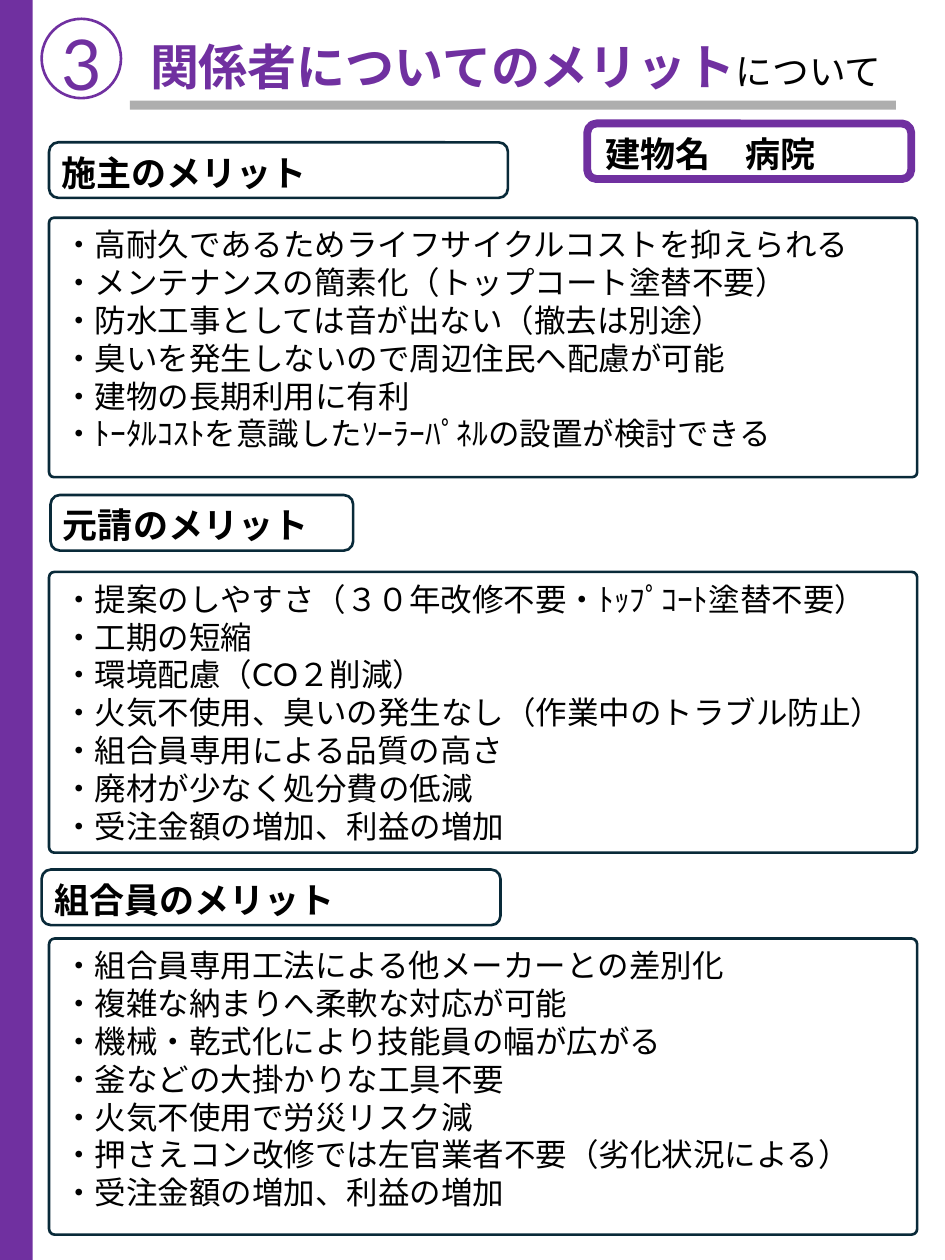
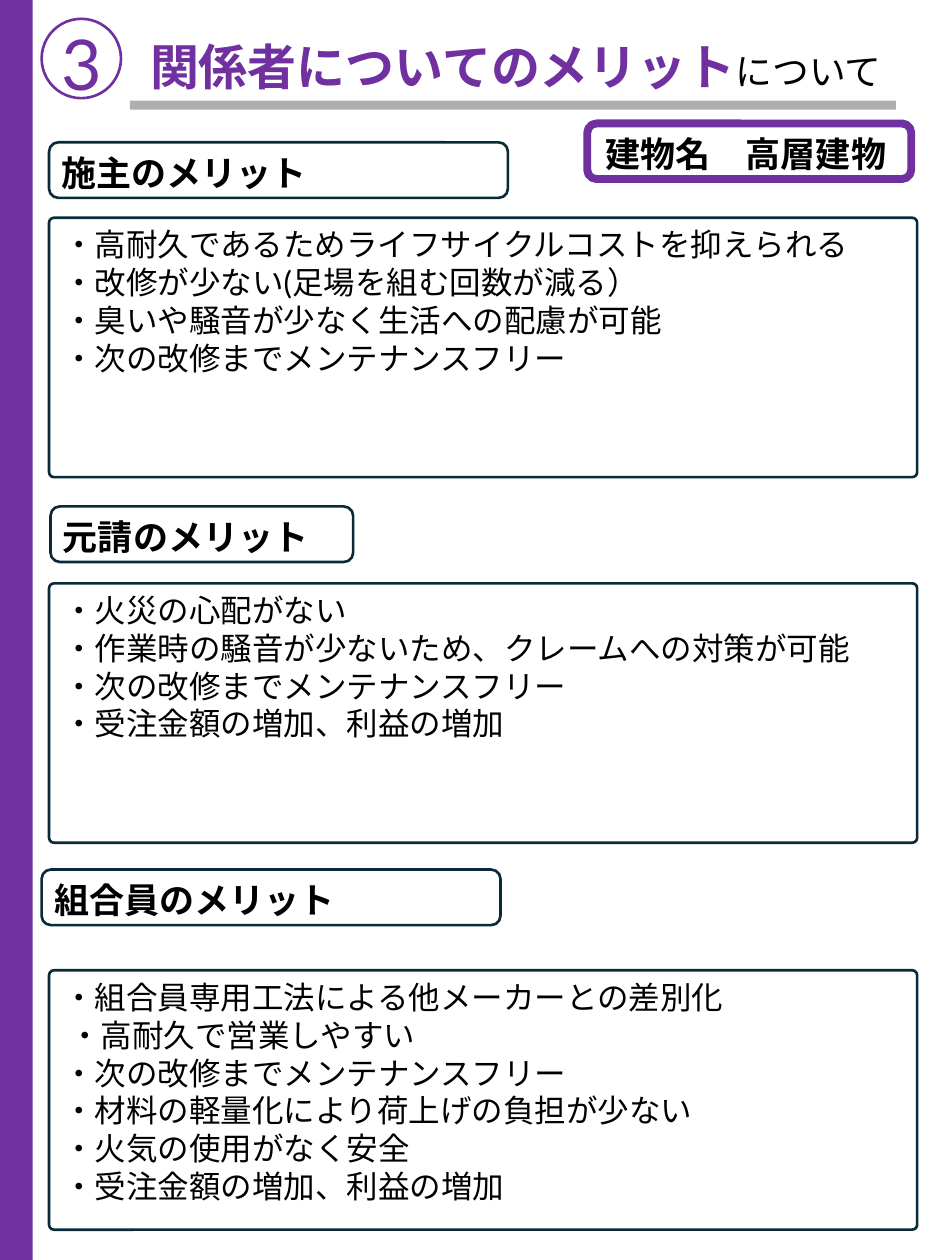
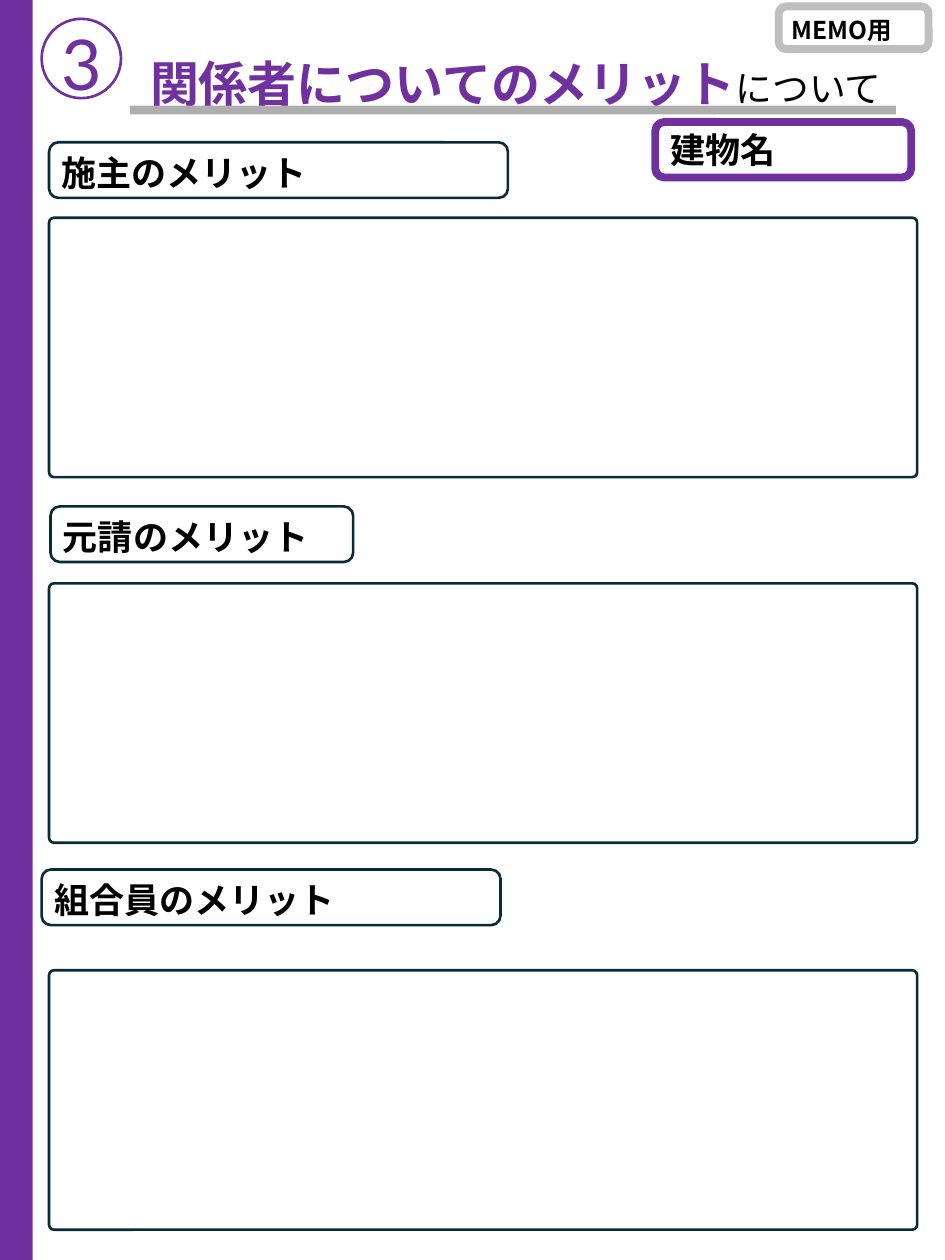
"""Build three portrait slides on the merits for each party in a building project."""
from dataclasses import dataclass
from typing import Any, NamedTuple

from pptx import Presentation
from pptx import util as u
from pptx.dml import color
from pptx.enum import lang, shapes, text
from pptx.oxml import xmlchemy as xml


@dataclass(frozen=True)
class Theme:
    """Colours, fonts and type sizes of the deck."""
    purple: str = "7030A0"
    navy: str = "092A39"
    bar_grey: str = "AEAEAE"
    memo_grey: str = "BFBFBF"
    white: str = "FFFFFF"
    black: str = "000000"
    body_font: str = "Lato"
    label_font: str = "Noto Sans CJK JP"
    number_size: int = 40
    title_size: int = 28
    suffix_size: int = 21
    label_size: int = 20
    list_size: int = 18
    memo_size: int = 14
    thin: float = 1.5
    thick: float = 4.5


class Box(NamedTuple):
    """Left, top, width and height in centimetres."""
    left: float
    top: float
    width: float
    height: float


@dataclass(frozen=True)
class Label:
    """Rounded frame with bold wording laid over it."""
    wording: str
    frame: Box
    words: Box
    line: str
    weight: float
    size: int


@dataclass(frozen=True)
class Section:
    """Heading and list panel for one party."""
    heading: Label
    panel: Box
    merits: tuple[str, ...] = ()
    indented: int = -1


@dataclass(frozen=True)
class Page:
    """Everything that differs between slides."""
    labels: tuple[Label, ...]
    sections: tuple[Section, ...]
    title_top: float = 0.61
    bar_top: float = 2.03


THEME = Theme()
SLIDE_WIDTH, SLIDE_HEIGHT = 19.05, 25.4
LABEL_HEIGHT = 1.12
PANEL_HEIGHT = 5.23
PANEL_ROUNDING = 0.019
EXTRA_INDENT = 0.12
COMPARISON_LAYOUT = 4


def set_all(target: Any, values: dict[str, Any]) -> None:
    """Set every attribute in values on target."""
    for attribute, value in values.items():
        setattr(target, attribute, value)


def place(part: Any, box: Box) -> None:
    """Move and size a part."""
    set_all(part, {side: u.Cm(length) for side, length in box._asdict().items()})


def write(paragraph: Any, wording: str, size: int, ink: str = THEME.black,
          family: str = THEME.body_font, bold: bool = False) -> None:
    """Add one formatted run to a paragraph."""
    run = paragraph.add_run()
    run.text = wording
    set_all(run.font, {"size": u.Pt(size), "bold": bold, "name": family,
                       "language_id": lang.MSO_LANGUAGE_ID.JAPANESE})
    run.font.color.rgb = color.RGBColor.from_string(ink)
    east_asian = xml.OxmlElement("a:ea")
    east_asian.set("typeface", family)
    run.font._element.append(east_asian)


def paint(part: Any, fill: str, line: str | None = None, weight: float = 0) -> None:
    """Give a part a solid fill and an optional outline."""
    part.fill.solid()
    part.fill.fore_color.rgb = color.RGBColor.from_string(fill)
    if line is None:
        part.line.fill.background()
    else:
        part.line.color.rgb = color.RGBColor.from_string(line)
        part.line.width = u.Pt(weight)


def add_figure(slide: Any, kind: Any, box: Box, fill: str,
               line: str | None = None, weight: float = 0) -> Any:
    """Add a flat preset shape."""
    figure = slide.shapes.add_shape(kind, *map(u.Cm, box))
    figure.shadow.inherit = False
    paint(figure, fill, line, weight)
    return figure


def add_words(slide: Any, box: Box, wording: str, size: int, **style: Any) -> None:
    """Add a wrapping text box with one line of text."""
    frame = slide.shapes.add_textbox(*map(u.Cm, box)).text_frame
    set_all(frame, {"word_wrap": True,
                    "auto_size": text.MSO_AUTO_SIZE.SHAPE_TO_FIT_TEXT})
    write(frame.paragraphs[0], wording, size, **style)


def add_label(slide: Any, label: Label) -> None:
    """Draw a rounded frame and its wording."""
    add_figure(slide, shapes.MSO_SHAPE.ROUNDED_RECTANGLE, label.frame,
               THEME.white, label.line, label.weight)
    add_words(slide, label.words, label.wording, label.size,
              family=THEME.label_font, bold=True)


def add_title(slide: Any, top: float) -> None:
    """Fill the title placeholder in two styles."""
    title = slide.shapes.title
    place(title, Box(2.77, top, 16.43, 1.6))
    set_all(title.text_frame, {"auto_size": text.MSO_AUTO_SIZE.NONE, "word_wrap": True,
                               "vertical_anchor": text.MSO_ANCHOR.MIDDLE})
    paragraph = title.text_frame.paragraphs[0]
    set_all(paragraph, {"alignment": text.PP_ALIGN.LEFT, "line_spacing": 0.9})
    write(paragraph, "関係者についてのメリット", THEME.title_size, THEME.purple, bold=True)
    write(paragraph, "について", THEME.suffix_size)


def fill_merits(panel: Any, section: Section) -> None:
    """Turn a body placeholder into a rounded list panel."""
    place(panel, section.panel)
    outline = xml.OxmlElement("a:prstGeom")
    outline.set("prst", "roundRect")
    panel._element.spPr.append(outline)
    paint(panel, THEME.white, THEME.navy, THEME.thin)
    frame = panel.text_frame
    set_all(frame, {"auto_size": text.MSO_AUTO_SIZE.NONE, "word_wrap": True,
                    "vertical_anchor": text.MSO_ANCHOR.TOP})
    for index, merit in enumerate(section.merits):
        paragraph = frame.add_paragraph() if index else frame.paragraphs[0]
        properties = paragraph._p.get_or_add_pPr()
        indent = EXTRA_INDENT if index == section.indented else 0
        properties.set("marL", str(int(u.Cm(indent))))
        properties.set("indent", "0")
        properties.append(xml.OxmlElement("a:buNone"))
        set_all(paragraph, {"space_before": u.Pt(0), "alignment": text.PP_ALIGN.LEFT})
        write(paragraph, f"・{merit}", THEME.list_size)


def add_section(slide: Any, section: Section, body: Any) -> None:
    """Draw a heading and its panel, listed or left open for notes."""
    add_label(slide, section.heading)
    if section.merits:
        fill_merits(body, section)
        panel = body
    else:
        body._element.getparent().remove(body._element)
        panel = add_figure(slide, shapes.MSO_SHAPE.ROUNDED_RECTANGLE, section.panel,
                           THEME.white, THEME.navy, THEME.thin)
    panel.adjustments[0] = PANEL_ROUNDING


def add_page(deck: Any, page: Page) -> None:
    """Build one slide."""
    slide = deck.slides.add_slide(deck.slide_layouts[COMPARISON_LAYOUT])
    *bodies, spare = list(slide.placeholders)[1:]
    spare._element.getparent().remove(spare._element)
    rectangle = shapes.MSO_SHAPE.RECTANGLE
    add_figure(slide, rectangle, Box(0, 0, 0.66, SLIDE_HEIGHT), THEME.purple)
    add_figure(slide, shapes.MSO_SHAPE.OVAL, Box(0.84, 0.38, 1.6, 1.6),
               THEME.white, THEME.purple, THEME.thin)
    add_words(slide, Box(0.99, 0.28, 1.09, 1.96), "3", THEME.number_size, ink=THEME.purple)
    add_figure(slide, rectangle, Box(2.62, page.bar_top, 15.44, 0.18), THEME.bar_grey)
    add_title(slide, page.title_top)
    for section, body in zip(page.sections, bodies):
        add_section(slide, section, body)
    for label in page.labels:
        add_label(slide, label)


def heading(wording: str, left: float, top: float, width: float, words_width: float) -> Label:
    """Describe a section heading."""
    return Label(wording, Box(left, top, width, LABEL_HEIGHT),
                 Box(left, top + 0.05, words_width, LABEL_HEIGHT),
                 THEME.navy, THEME.thin, THEME.label_size)


def panel_box(top: float, height: float = PANEL_HEIGHT) -> Box:
    """Describe a list panel."""
    return Box(0.99, top, 17.5, height)


def owner(*merits: str) -> Section:
    """Describe the building owner's section."""
    return Section(heading("施主のメリット", 0.99, 2.87, 9.25, 11.13), panel_box(4.39), merits)


def contractor(*merits: str, top: float = 10.21, height: float = PANEL_HEIGHT) -> Section:
    """Describe the main contractor's section."""
    return Section(heading("元請のメリット", 1.02, top, 6.1, 6.32),
                   panel_box(top + 1.55, height), merits)


def member(*merits: str, top: float = 19.56, height: float = PANEL_HEIGHT,
           indented: int = -1) -> Section:
    """Describe the union member's section."""
    return Section(heading("組合員のメリット", 0.84, 17.53, 9.25, 11.13),
                   panel_box(top, height), merits, indented)


def building(wording: str) -> Label:
    """Describe the badge that names the building."""
    return Label(wording, Box(11.84, 2.49, 6.53, LABEL_HEIGHT),
                 Box(11.96, 2.54, 6.53, LABEL_HEIGHT),
                 THEME.purple, THEME.thick, THEME.label_size)


LIFE_CYCLE = "高耐久であるためライフサイクルコストを抑えられる"
MAINTENANCE_FREE = "次の改修までメンテナンスフリー"
MORE_PROFIT = "受注金額の増加、利益の増加"
UNION_METHOD = "組合員専用工法による他メーカーとの差別化"

HOSPITAL = Page(
    (building("建物名　病院"),),
    (owner(LIFE_CYCLE,
           "メンテナンスの簡素化（トップコート塗替不要）",
           "防水工事としては音が出ない（撤去は別途）",
           "臭いを発生しないので周辺住民へ配慮が可能",
           "建物の長期利用に有利",
           "ﾄｰﾀﾙｺｽﾄを意識したｿｰﾗｰﾊﾟﾈﾙの設置が検討できる"),
     contractor("提案のしやすさ（３０年改修不要・ﾄｯﾌﾟｺｰﾄ塗替不要）",
                "工期の短縮",
                "環境配慮（CO２削減）",
                "火気不使用、臭いの発生なし（作業中のトラブル防止）",
                "組合員専用による品質の高さ",
                "廃材が少なく処分費の低減",
                MORE_PROFIT, top=9.98, height=5.66),
     member(UNION_METHOD,
            "複雑な納まりへ柔軟な対応が可能",
            "機械・乾式化により技能員の幅が広がる",
            "釜などの大掛かりな工具不要",
            "火気不使用で労災リスク減",
            "押さえコン改修では左官業者不要（劣化状況による）",
            MORE_PROFIT, top=18.92, height=5.97)))

HIGH_RISE = Page(
    (building("建物名　高層建物"),),
    (owner(LIFE_CYCLE,
           "改修が少ない(足場を組む回数が減る）",
           "臭いや騒音が少なく生活への配慮が可能",
           MAINTENANCE_FREE),
     contractor("火災の心配がない",
                "作業時の騒音が少ないため、クレームへの対策が可能",
                MAINTENANCE_FREE,
                MORE_PROFIT),
     member(UNION_METHOD,
            "高耐久で営業しやすい",
            MAINTENANCE_FREE,
            "材料の軽量化により荷上げの負担が少ない",
            "火気の使用がなく安全",
            MORE_PROFIT, indented=1)))

MEMO = Page(
    (Label("建物名", Box(13.21, 2.46, 5.16, LABEL_HEIGHT), Box(13.26, 2.46, 5.23, LABEL_HEIGHT),
           THEME.purple, THEME.thick, THEME.label_size),
     Label("MEMO用", Box(15.7, 0.13, 3.02, 0.86), Box(15.7, 0.18, 3.3, 0.86),
           THEME.memo_grey, THEME.thick, THEME.memo_size)),
    (owner(), contractor(), member()),
    title_top=0.94, bar_top=2.13)


def main() -> None:
    """Build and save the deck."""
    deck = Presentation()
    set_all(deck, {"slide_width": u.Cm(SLIDE_WIDTH), "slide_height": u.Cm(SLIDE_HEIGHT)})
    for page in (HOSPITAL, HIGH_RISE, MEMO):
        add_page(deck, page)
    deck.save("out.pptx")


if __name__ == "__main__":
    main()
